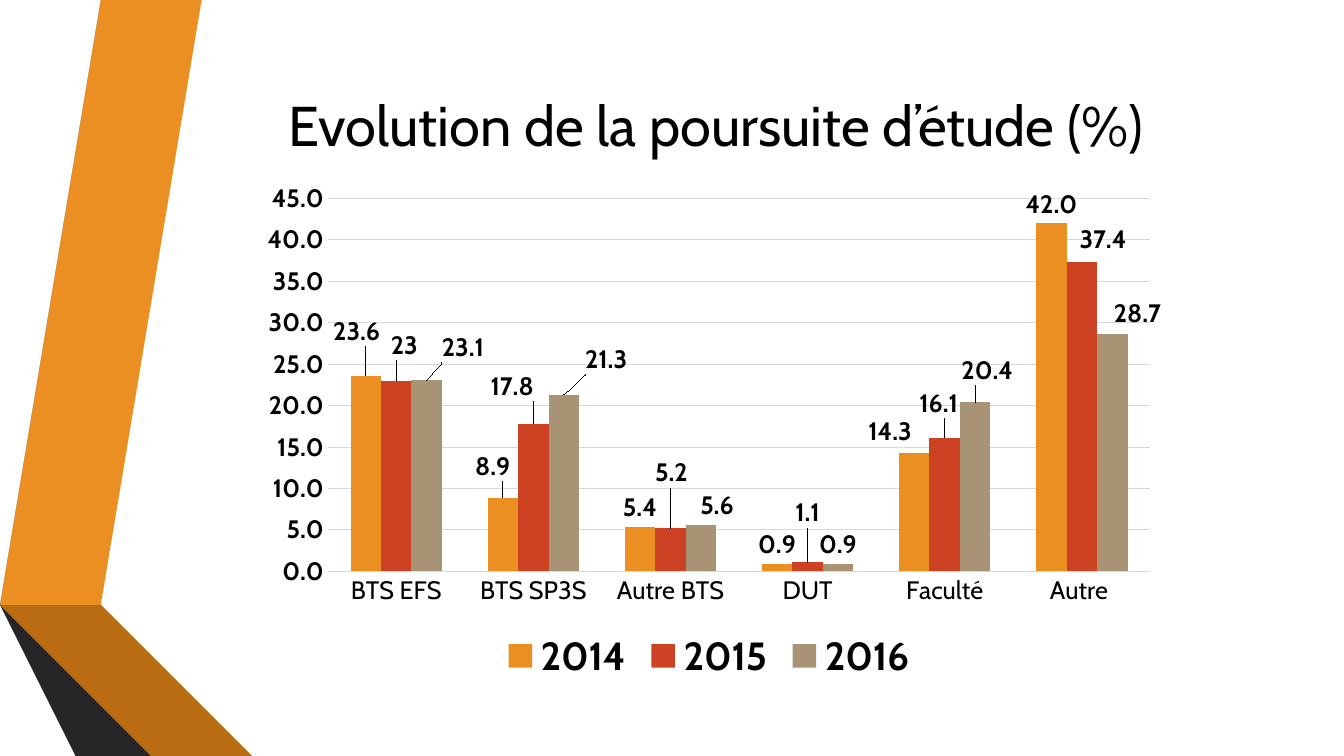
from lxml import etree
from pptx import Presentation
from pptx.chart.data import CategoryChartData
from pptx.dml.color import RGBColor
from pptx.enum.chart import (XL_CHART_TYPE, XL_LABEL_POSITION,
                             XL_LEGEND_POSITION, XL_TICK_MARK)
from pptx.enum.text import MSO_ANCHOR, PP_ALIGN
from pptx.oxml.ns import qn
from pptx.util import Inches, Pt

COLUMNS = XL_CHART_TYPE.COLUMN_CLUSTERED
ABOVE = XL_LABEL_POSITION.OUTSIDE_END
BOTTOM = XL_LEGEND_POSITION.BOTTOM
NO_TICK = XL_TICK_MARK.NONE
MIDDLE, CENTER = MSO_ANCHOR.MIDDLE, PP_ALIGN.CENTER

BLACK = RGBColor(0x00, 0x00, 0x00)
ORANGE = RGBColor(0xEB, 0x8F, 0x22)
RED = RGBColor(0xCD, 0x42, 0x23)
TAUPE = RGBColor(0xA8, 0x93, 0x74)
BROWN = RGBColor(0xB9, 0x6C, 0x11)
UMBER = RGBColor(0x7B, 0x48, 0x0B)
GRAY = RGBColor(0x59, 0x59, 0x59)
DARK = RGBColor(0x40, 0x40, 0x40)
COAL = RGBColor(0x26, 0x26, 0x26)
PALE = RGBColor(0xD9, 0xD9, 0xD9)

# Content
WIDTH, HEIGHT = 13.33, 7.5
FONT = "Cabin"
TITLE = "Evolution de la poursuite d’étude (%)"
CATS = ["BTS EFS", "BTS SP3S", "Autre BTS", "DUT", "Faculté", "Autre "]
# Year, colour, number format, values, label shifts in inches by category
SERIES = [
    ("2014", ORANGE, "0.0", (23.6, 8.9, 5.4, 0.9, 14.3, 42),
     {0: (-0.09, -0.25), 1: (-0.1, -0.12), 4: (-0.24, -0.02)}),
    ("2015", RED, "General", (23, 17.8, 5.2, 1.1, 16.1, 37.4),
     {0: (0.08, -0.16), 1: (-0.21, -0.18), 2: (0.01, -0.36),
      3: (0, -0.3), 4: (-0.06, -0.15), 5: (0.21, -0.03)}),
    ("2016", TAUPE, "0.0", (23.1, 21.3, 5.6, 0.9, 20.4, 28.7),
     {0: (0.36, -0.13), 1: (0.42, -0.16), 2: (0.16, 0),
      4: (0.12, -0.13), 5: (0.25, -0.01)}),
]
# Ribbon outlines, back to front
RIBBONS = [
    (ORANGE, [(0.5, 5.78), (0.77, 5.83), (1.73, 0), (1.45, 0)]),
    (GRAY, [(1.39, 0), (1.11, 0), (0.16, 5.73), (0.44, 5.77)]),
    (COAL, [(0.16, 5.73), (1.45, HEIGHT), (1.51, HEIGHT)]),
    (UMBER, [(0.5, 5.79), (2.08, HEIGHT), (2.14, HEIGHT)]),
    (BROWN, [(0.5, 5.78), (2.14, HEIGHT), (2.83, HEIGHT), (0.77, 5.83)]),
    (DARK, [(2.02, HEIGHT), (0.48, 5.83), (0.44, 5.77), (0.16, 5.73),
            (1.51, HEIGHT)]),
]
TITLE_BOX = (1.62, 0.75, 10.96, 0.97)
CHART_BOX = (2.46, 1.72, 9.14, 5.1)
PLOT_BOX = (0.79, 0.25, 8.16, 3.7)
LABEL = {"name": FONT, "size": Pt(18), "bold": True}


def style(font, **more):
    for key, val in {**LABEL, **more}.items():
        setattr(font, key, val)
    font.color.rgb = BLACK


def layout(**vals):
    """Manual chart layout, given in inches."""
    sizes = {"x": CHART_BOX[2], "w": CHART_BOX[2],
             "y": CHART_BOX[3], "h": CHART_BOX[3]}
    root = etree.Element(qn("c:layout"))
    manual = etree.SubElement(root, qn("c:manualLayout"))
    if "w" in vals:
        for tag, val in (("layoutTarget", "inner"), ("xMode", "edge"),
                         ("yMode", "edge")):
            etree.SubElement(manual, qn("c:" + tag), val=val)
    for key, val in vals.items():
        etree.SubElement(manual, qn("c:" + key), val=str(val / sizes[key]))
    return root


deck = Presentation()
deck.slide_width, deck.slide_height = Inches(WIDTH), Inches(HEIGHT)
slide = deck.slides.add_slide(deck.slide_layouts[6])

# Ribbons
for color, spots in RIBBONS:
    pen = slide.shapes.build_freeform(*spots[0], scale=Inches(1))
    pen.add_line_segments(spots[1:], close=True)
    band = pen.convert_to_shape()
    band.shadow.inherit = False
    band.fill.solid()
    band.fill.fore_color.rgb = color
    band.line.fill.background()

# Title
frame = slide.shapes.add_textbox(*map(Inches, TITLE_BOX)).text_frame
frame.word_wrap = True
frame.vertical_anchor = MIDDLE
para = frame.paragraphs[0]
para.alignment = CENTER
run = para.add_run()
run.text = TITLE
style(run.font, size=Pt(40), bold=False)

# Chart
data = CategoryChartData()
data.categories = CATS
for year, _, form, vals, _ in SERIES:
    data.add_series(year, vals, form)
chart = slide.shapes.add_chart(COLUMNS, *map(Inches, CHART_BOX), data).chart
chart.has_title = False
style(chart.font)
chart.has_legend = True
chart.legend.position = BOTTOM
chart.legend.include_in_layout = False
style(chart.legend.font, size=Pt(28))

# Axes
for axis, bold in ((chart.category_axis, False), (chart.value_axis, True)):
    axis.major_tick_mark = axis.minor_tick_mark = NO_TICK
    axis.format.line.fill.background()
    style(axis.tick_labels.font, bold=bold)
scale = chart.value_axis
scale.minimum_scale, scale.maximum_scale, scale.major_unit = 0, 45, 5
scale.tick_labels.number_format = "0.0"
scale.tick_labels.number_format_is_linked = False
scale.has_major_gridlines = True
grid = scale.major_gridlines.format.line
grid.color.rgb, grid.width = PALE, Pt(0.75)

# Columns and their labels
plot = chart.plots[0]
plot.gap_width, plot.overlap, plot.vary_by_categories = 150, 0, False
for series, (_, color, form, _, shifts) in zip(plot.series, SERIES):
    series.format.fill.solid()
    series.format.fill.fore_color.rgb = color
    labels = series.data_labels
    labels.show_value = True
    labels.position = ABOVE
    labels.number_format, labels.number_format_is_linked = form, False
    style(labels.font)
    for spot in shifts:
        label = series.points[spot].data_label
        style(label.font)
        label.position = ABOVE
    for node in series._element.iter(qn("c:dLbl")):
        idx = node.find(qn("c:idx"))
        dx, dy = shifts[int(idx.get("val"))]
        number = etree.Element(qn("c:numFmt"), formatCode=form,
                               sourceLinked="0")
        idx.addnext(number)
        idx.addnext(layout(x=dx, y=dy))

# Plot area
area = chart._chartSpace.find(".//" + qn("c:plotArea"))
for old in area.findall(qn("c:layout")):
    area.remove(old)
area.insert(0, layout(**dict(zip("xywh", PLOT_BOX))))

deck.save("out.pptx")
